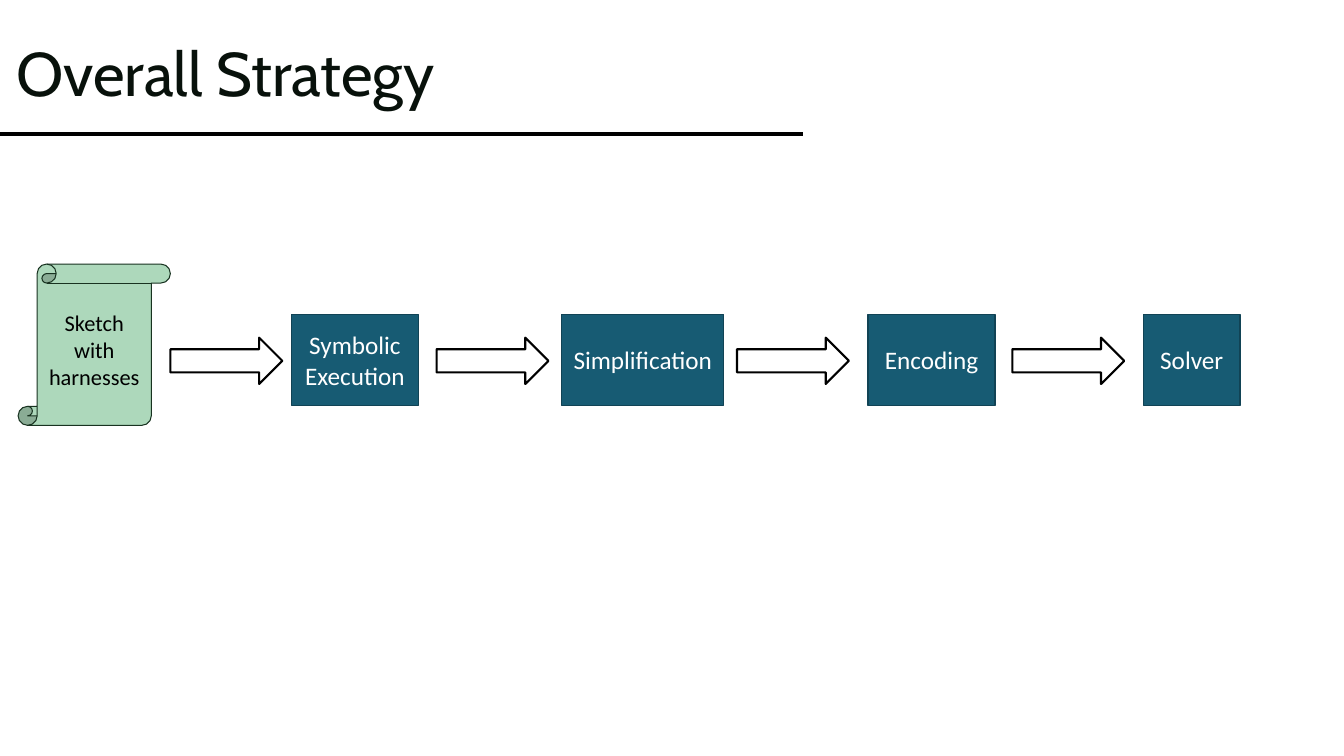
from lxml.etree import SubElement
from pptx import Presentation
from pptx.dml.color import RGBColor
from pptx.enum.shapes import MSO_CONNECTOR, MSO_SHAPE
from pptx.enum.text import MSO_ANCHOR, PP_ALIGN
from pptx.oxml.ns import qn
from pptx.util import Emu, Pt

EMU_PER_PX = 9144
BLACK = RGBColor(0x00, 0x00, 0x00)
WHITE = RGBColor(0xFF, 0xFF, 0xFF)
TITLE_INK = RGBColor(0x08, 0x11, 0x0B)
MINT = RGBColor(0xAD, 0xD8, 0xBB)
DARK_GREEN = RGBColor(0x18, 0x32, 0x20)
TEAL = RGBColor(0x17, 0x5B, 0x73)
DARK_TEAL = RGBColor(0x11, 0x43, 0x55)

STAGES = [
    ("Symbolic Execution", 289, 126),
    ("Simplification", 557, 161),
    ("Encoding", 861, 126),
    ("Solver", 1134, 96),
]
ARROW_LEFTS = [169, 433, 731, 1004]


def px(length):
    return Emu(length * EMU_PER_PX)


class PipelineSlide:
    """Draws the parts of a pipeline diagram on one title-only slide."""

    title_font = "Cabin"
    body_font = "Calibri"

    def __init__(self, presentation):
        self.slide = presentation.slides.add_slide(presentation.slide_layouts[5])

    def label(self, shape, text, font_name, size, color, alignment):
        frame = shape.text_frame
        frame.text = text
        frame.word_wrap = True
        frame.vertical_anchor = MSO_ANCHOR.MIDDLE
        paragraph = frame.paragraphs[0]
        paragraph.alignment = alignment
        paragraph.font.name = font_name
        paragraph.font.size = Pt(size)
        paragraph.font.color.rgb = color
        return paragraph

    def title(self, text, left, top, width, height):
        shape = self.slide.shapes.title
        shape.left, shape.top = px(left), px(top)
        shape.width, shape.height = px(width), px(height)
        paragraph = self.label(shape, text, self.title_font, 44, TITLE_INK, PP_ALIGN.LEFT)
        paragraph.line_spacing = 0.9

    def rule(self, left, right, y):
        connector = self.slide.shapes.add_connector(
            MSO_CONNECTOR.STRAIGHT, px(left), px(y), px(right), px(y))
        connector.line.color.rgb = BLACK
        connector.line.width = Pt(2.25)
        SubElement(connector.element.spPr, qn("a:effectLst"))

    def block(self, kind, left, top, width, height, fill, line, line_width):
        shape = self.slide.shapes.add_shape(
            kind, px(left), px(top), px(width), px(height))
        shape.shadow.inherit = False
        shape.fill.solid()
        shape.fill.fore_color.rgb = fill
        shape.line.color.rgb = line
        shape.line.width = Pt(line_width)
        return shape

    def scroll(self, text, left, top, width, height):
        shape = self.block(MSO_SHAPE.VERTICAL_SCROLL, left, top, width, height,
                           MINT, DARK_GREEN, 0.75)
        self.label(shape, text, self.body_font, 16, BLACK, PP_ALIGN.CENTER)

    def arrow(self, left):
        self.block(MSO_SHAPE.RIGHT_ARROW, left, 335, 111, 46, WHITE, BLACK, 1.5)

    def stage(self, text, left, width):
        shape = self.block(MSO_SHAPE.RECTANGLE, left, 312, width, 90,
                           TEAL, DARK_TEAL, 0.85)
        self.label(shape, text, self.body_font, 18, WHITE, PP_ALIGN.CENTER)


def main():
    presentation = Presentation()
    presentation.slide_width = px(1333)
    presentation.slide_height = px(750)

    strategy = PipelineSlide(presentation)
    strategy.rule(0, 796, 133)
    strategy.title("Overall Strategy", 6, 3, 751, 145)
    strategy.scroll("Sketch with harnesses", 18, 262, 151, 160)
    for arrow_left, (name, left, width) in zip(ARROW_LEFTS, STAGES):
        strategy.arrow(arrow_left)
        strategy.stage(name, left, width)

    presentation.save("out.pptx")


if __name__ == "__main__":
    main()
